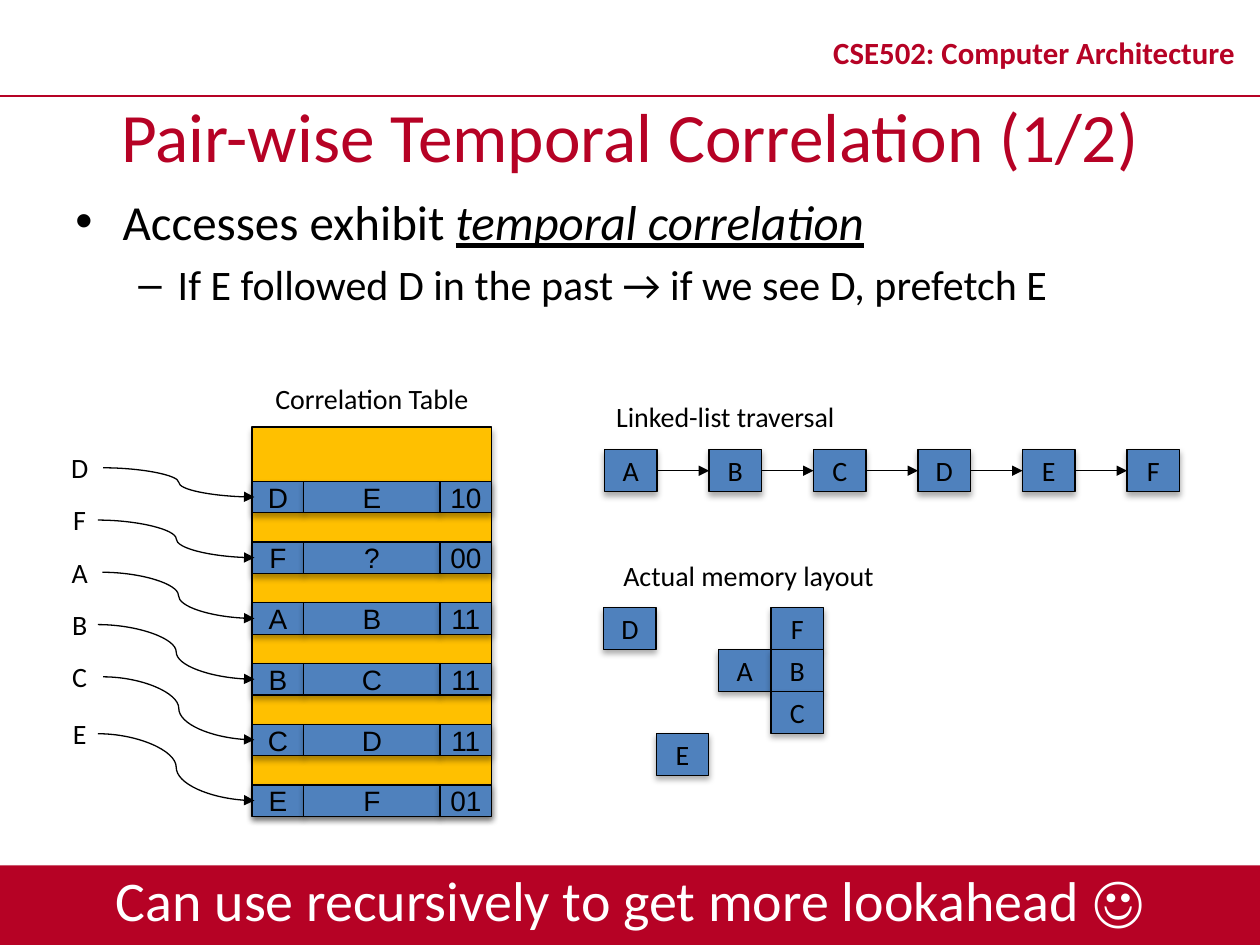
from dataclasses import dataclass
from itertools import pairwise

from lxml.etree import SubElement
from pptx import Presentation
from pptx.dml.color import RGBColor
from pptx.enum.shapes import MSO_CONNECTOR, MSO_SHAPE
from pptx.enum.text import MSO_ANCHOR, PP_ALIGN
from pptx.oxml.ns import qn
from pptx.util import Pt


@dataclass(frozen=True)
class Theme:
    red: str = "B60225"
    gold: str = "FFC000"
    blue: str = "4F81BD"
    black: str = "000000"
    white: str = "FFFFFF"
    font: str = "Calibri"
    table_font: str = "Arial"
    title: float = 39.6
    banner: float = 32
    body: float = 28
    sub: float = 24
    course: float = 17.6
    label: float = 16


T = Theme()
LIST_NODES = "ABCDEF"
TABLE_ROWS = [("D", "E", "10"), ("F", "?", "00"), ("A", "B", "11"),
              ("B", "C", "11"), ("C", "D", "11"), ("E", "F", "01")]
TABLE_LEFT, ROW_TOP, ROW_STEP, ROW_H = 144, 275, 34.7, 18
COLUMN_WIDTHS = (29.6, 77.8, 29.6)
LABEL_TOPS = (254, 283.9, 313.7, 343.6, 373.5, 406)
CURVE_STARTS = (59, 56, 58.5, 56, 59, 56)
CHIP_W, CHIP_H = 30, 24
MEMORY_LEFT, MEMORY_TOP = 345, 347
# Offset from the memory origin: points across, chip heights down
MEMORY = {"D": (0, 0), "F": (95.6, 0), "A": (65.6, 1),
          "B": (95.6, 1), "C": (95.6, 2), "E": (30, 3)}


def add_run(p, text, size, color=T.black, font=T.font, **style):
    r = p.add_run()
    r.text = text
    r.font.name, r.font.size = font, Pt(size)
    r.font.color.rgb = RGBColor.from_string(color)
    for name, value in style.items():
        setattr(r.font, name, value)
    return r


def add_text(slide, box, text, size, color=T.black, align=PP_ALIGN.CENTER,
             anchor=MSO_ANCHOR.TOP, wrap=True, **style):
    s = slide.shapes.add_textbox(*map(Pt, box))
    tf = s.text_frame
    tf.word_wrap, tf.vertical_anchor = wrap, anchor
    p = tf.paragraphs[0]
    p.alignment = align
    add_run(p, text, size, color, **style)
    return s


def add_shadow(s, blur, distance, opacity):
    s.shadow.inherit = False
    effects = s._element.spPr.find(qn("a:effectLst"))
    shadow = SubElement(effects, qn("a:outerShdw"), blurRad=str(Pt(blur)),
                        dist=str(Pt(distance)), dir="5400000", rotWithShape="0")
    color = SubElement(shadow, qn("a:srgbClr"), val=T.black)
    SubElement(color, qn("a:alpha"), val=str(opacity * 1000))


def add_rect(slide, box, fill, outlined=True):
    s = slide.shapes.add_shape(MSO_SHAPE.RECTANGLE, *map(Pt, box))
    s.fill.solid()
    s.fill.fore_color.rgb = RGBColor.from_string(fill)
    if outlined:
        s.line.color.rgb = RGBColor.from_string(T.black)
        s.line.width = Pt(0.75)
        add_shadow(s, 3.5, 2.2, 32)
    else:
        s.line.fill.background()
        add_shadow(s, 3.1, 1.8, 35)
    return s


def add_cell(slide, box, text, font=T.font):
    s = add_rect(slide, box, T.blue)
    tf = s.text_frame
    tf.word_wrap, tf.vertical_anchor = False, MSO_ANCHOR.MIDDLE
    tf.margin_left = tf.margin_right = tf.margin_top = tf.margin_bottom = 0
    p = tf.paragraphs[0]
    p.alignment = PP_ALIGN.CENTER
    add_run(p, text, T.label, font=font)
    return s


def add_line(slide, start, end, kind=MSO_CONNECTOR.STRAIGHT, color=T.black,
             width=0.75, arrow=True):
    s = slide.shapes.add_connector(kind, *map(Pt, (*start, *end)))
    s.line.color.rgb = RGBColor.from_string(color)
    s.line.width = Pt(width)
    if arrow:
        SubElement(s.line._get_or_add_ln(), qn("a:tailEnd"), type="triangle")
    SubElement(s._element.spPr, qn("a:effectLst"))
    return s


def set_bullet(p, char, margin, hanging):
    pPr = p._p.get_or_add_pPr()
    pPr.set("marL", str(Pt(margin)))
    pPr.set("indent", str(-Pt(hanging)))
    SubElement(pPr, qn("a:buFont"), typeface="Arial")
    SubElement(pPr, qn("a:buChar"), char=char)


def add_frame(slide):
    """Draw the course heading, title, rule and bottom banner."""
    add_rect(slide, (0, 494.5, 720, 45.5), T.red, outlined=False)
    add_line(slide, (0, 54.7), (720, 54.7), color=T.red, width=1, arrow=False)
    s = add_text(slide, (462, 9.4, 258, 45), "CSE502: Computer Architecture",
                 T.course, T.red, anchor=MSO_ANCHOR.MIDDLE, bold=True)
    s.text_frame.paragraphs[0].line_spacing = 0.8
    add_text(slide, (0, 54.7, 720, 45), "Pair-wise Temporal Correlation (1/2)",
             T.title, T.red, anchor=MSO_ANCHOR.MIDDLE)
    add_text(slide, (0, 491, 720, 45),
             "Can use recursively to get more lookahead ☺", T.banner, T.white)


def add_bullets(slide):
    s = slide.shapes.add_textbox(Pt(36), Pt(106), Pt(648), Pt(385))
    tf = s.text_frame
    tf.word_wrap = True
    p = tf.paragraphs[0]
    set_bullet(p, "•", 27, 27)
    add_run(p, "Accesses exhibit ", T.body)
    add_run(p, "temporal correlation", T.body, italic=True, underline=True)
    p = tf.add_paragraph()
    p.level = 1
    p.space_before = Pt(4.8)
    set_bullet(p, "–", 58.5, 22.5)
    add_run(p, "If E followed D in the past → if we see D, prefetch E", T.sub)


def add_correlation_table(slide):
    """Draw the sparse hardware table and the accesses that index it."""
    add_rect(slide, (TABLE_LEFT, 244, sum(COLUMN_WIDTHS), 222), T.gold)
    add_text(slide, (TABLE_LEFT, 214.6, sum(COLUMN_WIDTHS), 26.6),
             "Correlation Table", T.label)
    for i, (row, top, start) in enumerate(zip(TABLE_ROWS, LABEL_TOPS, CURVE_STARTS)):
        y = ROW_TOP + i * ROW_STEP
        x = TABLE_LEFT
        for text, width in zip(row, COLUMN_WIDTHS):
            add_cell(slide, (x, y, width, ROW_H), text, T.table_font)
            x += width
        add_text(slide, (32.5, top, 26, 26.6), row[0], T.label, wrap=False)
        add_line(slide, (start, top + 13.3), (TABLE_LEFT + 1.4, y + ROW_H / 2),
                 MSO_CONNECTOR.CURVE)


def add_linked_list(slide):
    add_text(slide, (345, 224.8, 141, 26.6), "Linked-list traversal", T.label,
             align=PP_ALIGN.LEFT, wrap=False)
    nodes = [add_cell(slide, (345.5 + i * 59.7, 257, CHIP_W, CHIP_H), name)
             for i, name in enumerate(LIST_NODES)]
    for left, right in pairwise(nodes):
        s = add_line(slide, (0, 0), (0, 0))
        s.begin_connect(left, 3)
        s.end_connect(right, 1)


def add_memory_layout(slide):
    add_text(slide, (345, 315.6, 165.6, 26.6), "Actual memory layout", T.label)
    for name, (across, down) in MEMORY.items():
        add_cell(slide, (MEMORY_LEFT + across, MEMORY_TOP + down * CHIP_H,
                         CHIP_W, CHIP_H), name)


def main():
    prs = Presentation()
    prs.slide_width, prs.slide_height = Pt(720), Pt(540)
    slide = prs.slides.add_slide(prs.slide_layouts[6])
    add_frame(slide)
    add_bullets(slide)
    add_correlation_table(slide)
    add_linked_list(slide)
    add_memory_layout(slide)
    prs.save("out.pptx")


if __name__ == "__main__":
    main()
